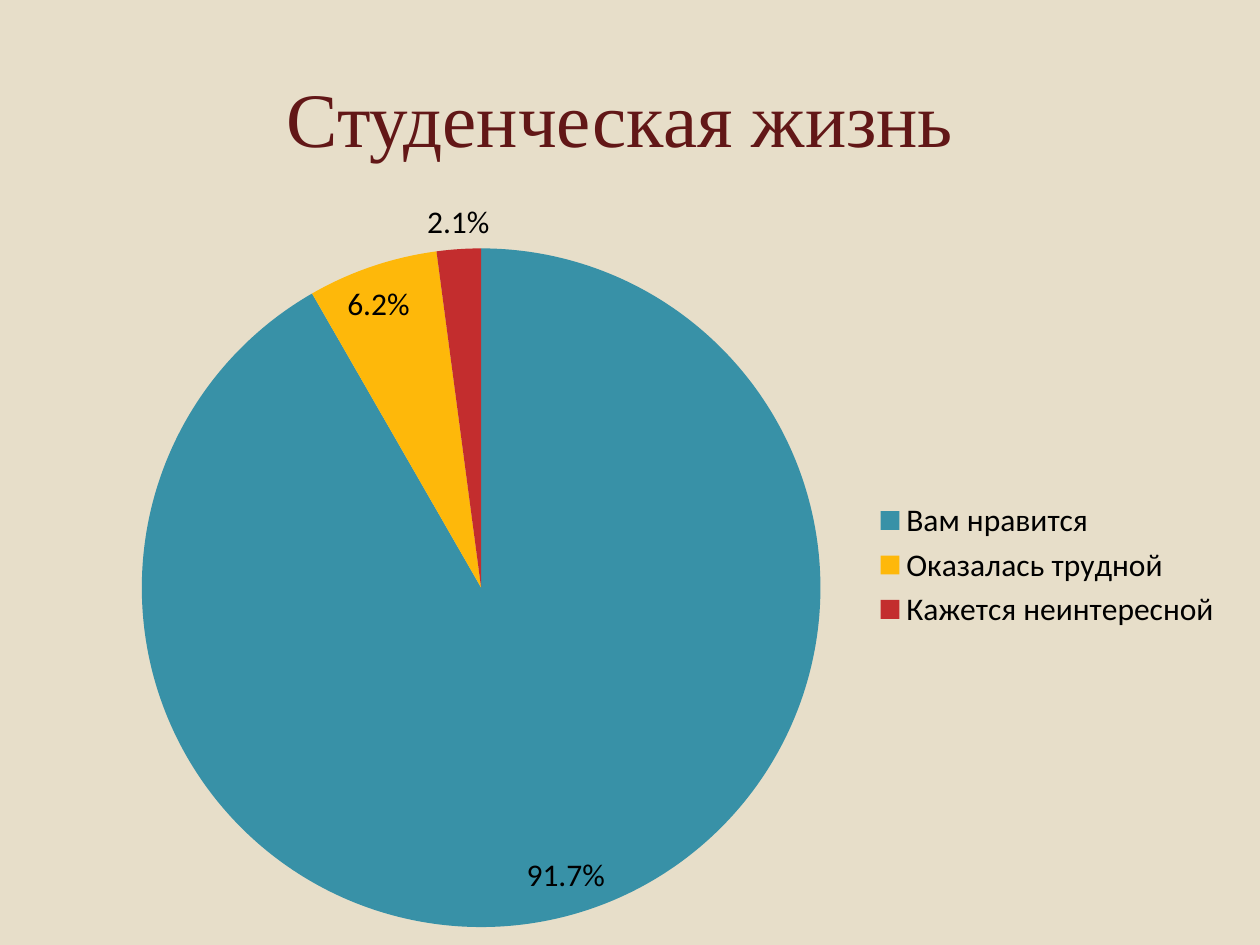
from lxml import etree
from pptx import Presentation
from pptx.chart.data import CategoryChartData
from pptx.dml.color import RGBColor
from pptx.enum import chart as ch, text as tx
from pptx.oxml.ns import qn
from pptx.util import Cm, Pt

ANSWERS = [
    ("Вам нравится", 91.7, "3891A7"),
    ("Оказалась трудной", 6.2, "FEB80A"),
    ("Кажется неинтересной", 2.1, "C32D2E"),
]


def set_fill(fill, color):
    fill.solid()
    fill.fore_color.rgb = RGBColor.from_string(color)


def format_font(font, name, size, color):
    font.name = name
    font.size = Pt(size)
    font.color.rgb = RGBColor.from_string(color)


def write_text(shape, content, *, font, size, color, align=tx.PP_ALIGN.CENTER):
    frame = shape.text_frame
    frame.word_wrap = True
    frame.vertical_anchor = tx.MSO_ANCHOR.MIDDLE
    paragraph = frame.paragraphs[0]
    paragraph.alignment = align
    run = paragraph.add_run()
    run.text = content
    format_font(run.font, font, size, color)


def place_plot(chart, **fractions):
    """Fix the inner plot area, as fractions of the chart's size."""
    plot_area = chart._chartSpace.chart.plotArea
    for old_layout in plot_area.findall(qn("c:layout")):
        plot_area.remove(old_layout)
    layout = etree.Element(qn("c:layout"))
    manual = etree.SubElement(layout, qn("c:manualLayout"))
    settings = {"layoutTarget": "inner", "xMode": "edge", "yMode": "edge", **fractions}
    for tag, value in settings.items():
        etree.SubElement(manual, qn(f"c:{tag}")).set("val", str(value))
    plot_area.insert(0, layout)


def add_answer_pie(slide, left, top, width, height):
    data = CategoryChartData()
    data.categories = [name for name, _, _ in ANSWERS]
    data.add_series("Series 1", [value for _, value, _ in ANSWERS])
    chart = slide.shapes.add_chart(
        ch.XL_CHART_TYPE.PIE, left, top, width, height, data).chart
    chart.has_title = False
    format_font(chart.font, "Calibri", 18, "000000")
    chart.has_legend = True
    chart.legend.position = ch.XL_LEGEND_POSITION.RIGHT
    chart.legend.include_in_layout = False

    plot = chart.plots[0]
    plot.vary_by_categories = True
    for index, (_, _, color) in enumerate(ANSWERS):
        set_fill(plot.series[0].points[index].format.fill, color)
    plot.has_data_labels = True
    labels = plot.data_labels
    labels.show_percentage = True
    labels.show_value = False
    labels.number_format = "0.0%"
    labels.number_format_is_linked = False
    labels.position = ch.XL_LABEL_POSITION.BEST_FIT
    format_font(labels.font, "Calibri", 18, "000000")
    place_plot(chart, x=0.05, y=0.08, w=0.59, h=0.9)


def main():
    presentation = Presentation()
    presentation.slide_width, presentation.slide_height = Cm(25.4), Cm(19.05)
    slide = presentation.slides.add_slide(presentation.slide_layouts[5])
    set_fill(slide.background.fill, "E7DEC9")

    title = slide.shapes.title
    title.left, title.top, title.width, title.height = (
        Cm(1.27), Cm(0.76), Cm(22.86), Cm(3.18))
    write_text(title, "Студенческая жизнь ", font="Times New Roman",
               size=44, color="621717")
    add_answer_pie(slide, Cm(1.7), Cm(3.73), Cm(23.19), Cm(15.32))
    presentation.save("out.pptx")


if __name__ == "__main__":
    main()
